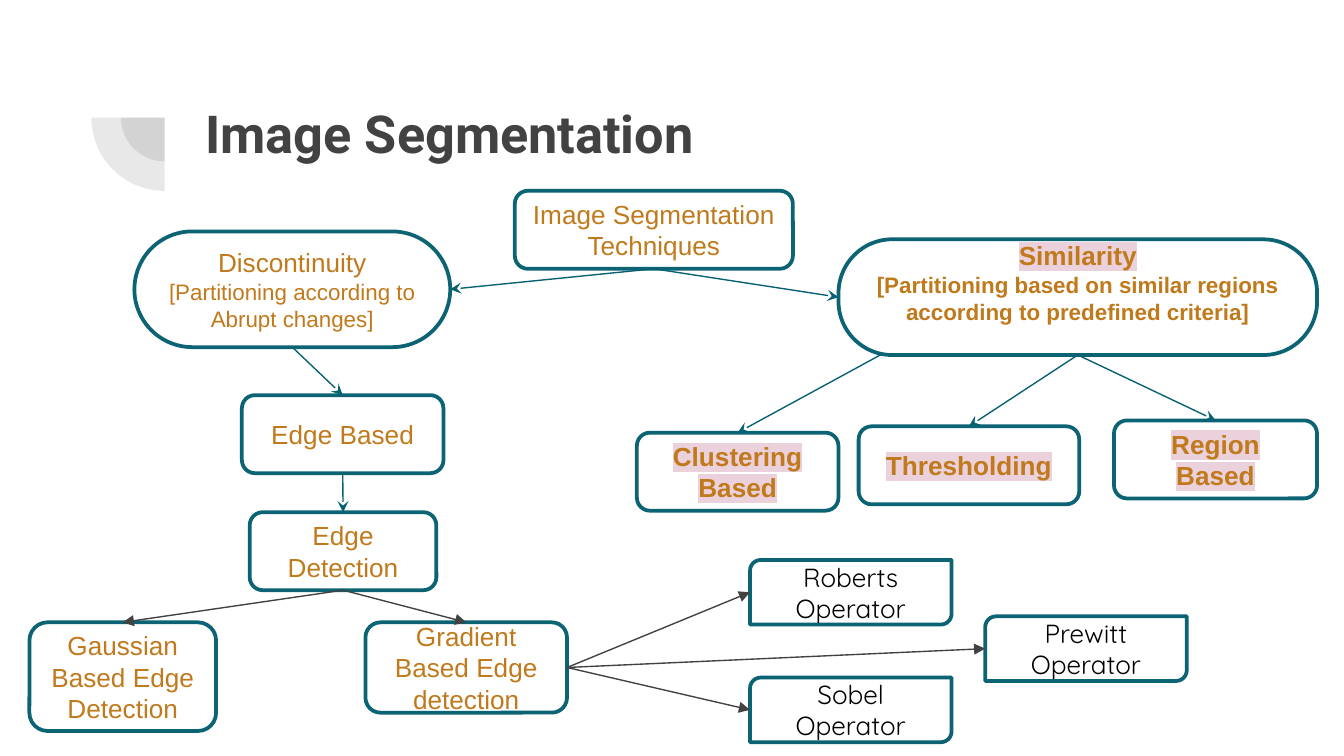
from lxml import etree
from pptx import Presentation
from pptx.dml.color import RGBColor
from pptx.enum.shapes import MSO_CONNECTOR, MSO_SHAPE
from pptx.enum.text import MSO_ANCHOR, PP_ALIGN
from pptx.oxml.ns import qn
from pptx.util import Pt

ROUND = MSO_SHAPE.ROUNDED_RECTANGLE
DIAGONAL = MSO_SHAPE.ROUND_2_DIAG_RECTANGLE
PIE = MSO_SHAPE.PIE
STRAIGHT = MSO_CONNECTOR.STRAIGHT
CENTER = PP_ALIGN.CENTER
MIDDLE = MSO_ANCHOR.MIDDLE
TOP, LEFT, BOTTOM, RIGHT = range(4)

WHITE = RGBColor(0xFF, 0xFF, 0xFF)
BLACK = RGBColor(0, 0, 0)
GRAY = RGBColor(0x42, 0x42, 0x42)
TEAL = RGBColor(0x0B, 0x63, 0x74)
DARK_TEAL = RGBColor(0x07, 0x61, 0x73)
OCHRE = RGBColor(0xC0, 0x79, 0x1B)
PINK = RGBColor(0xEA, 0xD1, 0xDC)

TITLE = "Image Segmentation"
ARC_CENTER = (88.2, 63)
ARC_RADII = (23.4, 39.25)

TECHNIQUES = {
    "root": (["Image Segmentation Techniques"], 275.8, 102.2, 149, 41.8),
    "discontinuity": (["Discontinuity", "[Partitioning according to Abrupt changes]"],
                      72, 124, 169.2, 62),
    "edge based": (["Edge Based"], 129.6, 211.7, 108, 41.8),
    "edge detection": (["Edge Detection"], 133.8, 274.4, 100, 41.8),
    "gaussian": (["Gaussian Based Edge Detection"], 15.8, 333.4, 100, 58.2),
    "gradient": (["Gradient Based Edge detection"], 195.8, 333.4, 108, 48.4),
    "similarity": (["Similarity", "[Partitioning based on similar regions "
                    "according to predefined criteria]"], 449.2, 128.2, 256.4, 62),
    "clustering": (["Clustering Based"], 341.2, 231.8, 108, 41.8),
    "thresholding": (["Thresholding"], 460, 228.4, 118.2, 41.8),
    "region": (["Region Based"], 596.8, 225.2, 108.8, 41.8),
}
HIGHLIGHTED = ("similarity", "clustering", "thresholding", "region")
CORNERS = {"discontinuity": 0.5, "similarity": 0.465}
EXTRA_BOTTOM = {"similarity": 16}

OPERATOR_SIZE = (108, 34.6)
OPERATORS = [
    ("Roberts Operator", 401.8, 300),
    ("Prewitt Operator", 527.8, 330.2),
    ("Sobel Operator", 401.8, 363),
]

TECHNIQUE_ARROWS = [
    ("root", BOTTOM, "discontinuity", RIGHT),
    ("root", BOTTOM, "similarity", LEFT),
    ("discontinuity", BOTTOM, "edge based", TOP),
    ("edge based", BOTTOM, "edge detection", TOP),
    ("similarity", BOTTOM, "thresholding", TOP),
    ("similarity", BOTTOM, "region", TOP),
]
DETECTION_ARROWS = [
    ("edge detection", BOTTOM, "gaussian", TOP),
    ("edge detection", BOTTOM, "gradient", TOP),
]
CLUSTERING_START = (471.6, 190.2)


def set_highlight(run, color):
    highlight = etree.SubElement(run.font._element, qn("a:highlight"))
    etree.SubElement(highlight, qn("a:srgbClr")).set("val", str(color))


def add_box(slide, kind, corner, left, top, width, height):
    shape = slide.shapes.add_shape(kind, Pt(left), Pt(top), Pt(width), Pt(height))
    shape.shadow.inherit = False
    shape.adjustments[0] = corner
    shape.fill.solid()
    shape.fill.fore_color.rgb = WHITE
    shape.line.color.rgb = TEAL
    shape.line.width = Pt(2)
    return shape


def write(shape, lines, font, color, bold, inset, highlight=None, extra_bottom=0):
    frame = shape.text_frame
    frame.word_wrap = True
    frame.vertical_anchor = MIDDLE
    frame.margin_left = frame.margin_right = Pt(7.2)
    frame.margin_top = Pt(inset)
    frame.margin_bottom = Pt(inset + extra_bottom)
    for index, line in enumerate(lines):
        paragraph = frame.add_paragraph() if index else frame.paragraphs[0]
        run = paragraph.add_run()
        run.text = line
        paragraph.alignment = CENTER
        paragraph.font.size = Pt(12 if index else 14)
        paragraph.font.name = font
        paragraph.font.bold = bold
        paragraph.font.color.rgb = color
        if highlight and index == 0:
            set_highlight(run, highlight)


def add_arrow(slide, color, head, start=(0, 0), end=(0, 0), begin=None, finish=None):
    points = [Pt(value) for value in (*start, *end)]
    connector = slide.shapes.add_connector(STRAIGHT, *points)
    if begin:
        connector.begin_connect(*begin)
    if finish:
        connector.end_connect(*finish)
    connector.line.color.rgb = color
    connector.line.width = Pt(0.75)
    etree.SubElement(connector.line._get_or_add_ln(), qn("a:tailEnd")).set("type", head)
    etree.SubElement(connector._element.spPr, qn("a:effectLst"))


def add_arcs(slide):
    x, y = ARC_CENTER
    for radius in ARC_RADII:
        arc = slide.shapes.add_shape(PIE, Pt(x - radius), Pt(y - radius),
                                     Pt(2 * radius), Pt(2 * radius))
        arc.shadow.inherit = False
        arc.adjustments[0] = 54
        arc.adjustments[1] = 108
        arc.fill.solid()
        arc.fill.fore_color.rgb = GRAY
        arc.line.fill.background()
        color = arc._element.spPr.find(qn("a:solidFill"))[0]
        etree.SubElement(color, qn("a:alpha")).set("val", "12000")


def add_title(slide):
    frame = slide.shapes.add_textbox(Pt(103), Pt(46.8), Pt(553.6), Pt(48.2)).text_frame
    frame.word_wrap = True
    frame.margin_left = frame.margin_right = frame.margin_top = frame.margin_bottom = Pt(7.2)
    paragraph = frame.paragraphs[0]
    paragraph.text = TITLE
    paragraph.font.size = Pt(28)
    paragraph.font.name = "Roboto"
    paragraph.font.bold = True
    paragraph.font.color.rgb = GRAY


def main():
    presentation = Presentation()
    presentation.slide_width, presentation.slide_height = Pt(720), Pt(405)
    slide = presentation.slides.add_slide(presentation.slide_layouts[6])
    add_arcs(slide)
    add_title(slide)

    boxes = {}
    for name, (lines, *place) in TECHNIQUES.items():
        boxes[name] = add_box(slide, ROUND, CORNERS.get(name, 0.167), *place)
        marked = name in HIGHLIGHTED
        write(boxes[name], lines, "Arial", OCHRE, marked, 3.6,
              PINK if marked else None, EXTRA_BOTTOM.get(name, 0))

    width, height = OPERATOR_SIZE
    gradient = boxes["gradient"]
    gradient_right = ((gradient.left + gradient.width).pt if hasattr(gradient.left + gradient.width, "pt")
                      else Pt(0).pt, 0)
    for label, left, top in OPERATORS:
        box = add_box(slide, DIAGONAL, 0.167, left, top, width, height)
        write(box, [label], "Quicksand", BLACK, False, 7.2)
        add_arrow(slide, GRAY, "triangle", gradient_right, (left, top + height / 2),
                  begin=(gradient, RIGHT))

    for arrows, color, head in ((TECHNIQUE_ARROWS, DARK_TEAL, "stealth"),
                                (DETECTION_ARROWS, GRAY, "triangle")):
        for source, source_side, target, target_side in arrows:
            add_arrow(slide, color, head, begin=(boxes[source], source_side),
                      finish=(boxes[target], target_side))
    add_arrow(slide, DARK_TEAL, "stealth", CLUSTERING_START,
              finish=(boxes["clustering"], TOP))
    presentation.save("out.pptx")


if __name__ == "__main__":
    main()
